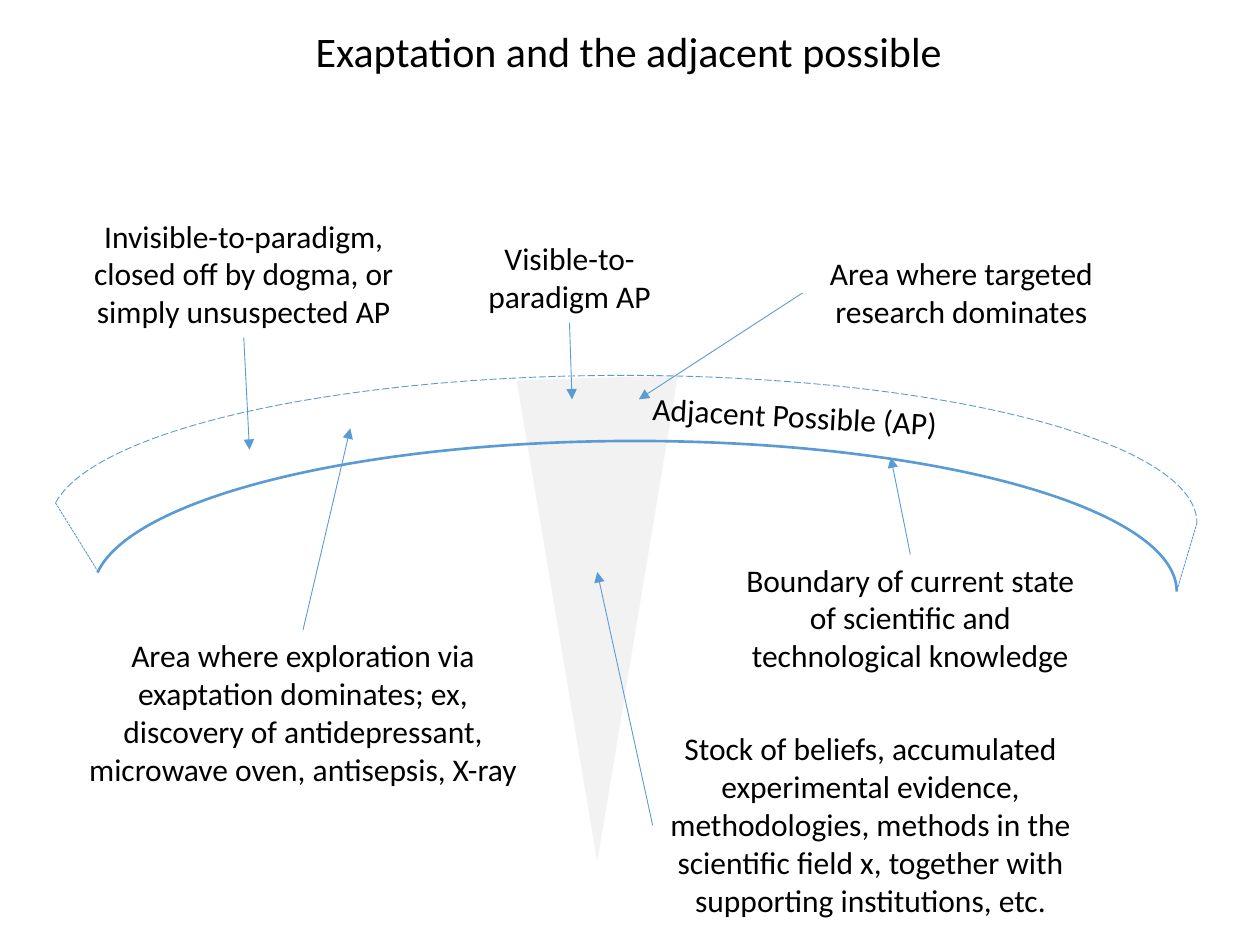
from lxml import etree
from pptx import Presentation
from pptx import util as u
from pptx.dml.color import RGBColor
from pptx.enum import dml, shapes, text
from pptx.oxml import ns

HEX = {"ink": "000000", "line": "5B9BD5", "wedge": "F2F2F2"}
DASH = dml.MSO_LINE_DASH_STYLE
TOP, LEFT, BOTTOM = 0, 1, 2


def color(name):
    return RGBColor.from_string(HEX[name])


def lengths(*nums):
    return [u.Inches(n) for n in nums]


def write(shape, words, size=18, align=text.PP_ALIGN.CENTER,
          anchor=text.MSO_ANCHOR.TOP, wrap=True):
    frame = shape.text_frame
    frame.word_wrap = wrap
    frame.vertical_anchor = anchor
    para = frame.paragraphs[0]
    para.alignment = align
    run = para.add_run()
    run.text = words
    run.font.size = u.Pt(size)
    run.font.name = "Calibri"
    run.font.color.rgb = color("ink")


def stroke(shape, width=0.5, dash=None):
    shape.line.color.rgb = color("line")
    shape.line.width = u.Pt(width)
    if dash:
        shape.line.dash_style = dash


def link(parent, start, end, dash=None, arrow=False):
    line = parent.add_connector(shapes.MSO_CONNECTOR.STRAIGHT,
                                *lengths(*start, *end))
    stroke(line, dash=dash)
    if arrow:
        tail = etree.SubElement(line.line._get_or_add_ln(), ns.qn("a:tailEnd"))
        tail.set("type", "triangle")
    etree.SubElement(line._element.spPr, ns.qn("a:effectLst"))
    return line


def head(slide, box):
    title = slide.shapes.title
    title.left, title.top, title.width, title.height = lengths(*box)
    write(title, "Exaptation and the adjacent possible", size=24,
          anchor=text.MSO_ANCHOR.MIDDLE)


def wedge(slide, box):
    x, y, w, h = box
    pen = slide.shapes.build_freeform(*lengths(x, y + 0.04))
    pen.add_line_segments([lengths(x + w / 2, y + h), lengths(x + w, y)])
    shape = pen.convert_to_shape()
    shape.shadow.inherit = False
    shape.fill.solid()
    shape.fill.fore_color.rgb = color("wedge")
    shape.line.fill.background()


def arc(parent, box, width, dash=None):
    shape = parent.add_shape(shapes.MSO_SHAPE.ARC, *lengths(*box))
    shape.adjustments[0] = 109.21
    shape.adjustments[1] = 0
    shape.shadow.inherit = False
    shape.fill.background()
    stroke(shape, width, dash)


def band(slide, box):
    x, y, w, h = box
    parts = slide.shapes.add_group_shape().shapes
    arc(parts, (x + 0.34, y + 0.52, w - 0.5, h + 0.05), 1.5)
    arc(parts, box, 0.5, DASH.LONG_DASH)
    link(parts, (x + 0.04, y + 1.01), (x + 0.38, y + 1.56), DASH.SQUARE_DOT)
    link(parts, (x + w, y + h / 2), (x + w - 0.16, y + 1.71), DASH.SQUARE_DOT)


def name(slide, box):
    label = slide.shapes.add_textbox(*lengths(*box))
    label.rotation = 3.1
    write(label, "Adjacent Possible (AP)", align=text.PP_ALIGN.LEFT, wrap=False)


def note(slide, box, words, side, end):
    label = slide.shapes.add_textbox(*lengths(*box))
    write(label, words)
    line = link(slide.shapes, box[:2], end, arrow=True)
    line.begin_connect(label, side)


NOTES = [
    ((5.18, 5.74, 3.46, 1.62),
     "Stock of beliefs, accumulated experimental evidence, methodologies, "
     "methods in the scientific field x, together with supporting "
     "institutions, etc.", LEFT, (4.74, 4.54)),
    ((3.45, 1.85, 2.14, 0.71), "Visible-to-paradigm AP", BOTTOM, (4.54, 3.17)),
    ((6.37, 1.97, 2.52, 0.71), "Area where targeted research dominates",
     LEFT, (5.07, 3.17)),
    ((0.59, 5, 3.63, 1.31),
     "Area where exploration via exaptation dominates; ex, discovery of "
     "antidepressant, microwave oven, antisepsis, X-ray", TOP, (2.78, 3.4)),
    ((5.74, 4.4, 2.97, 1.01),
     "Boundary of current state of scientific and technological knowledge",
     TOP, (7.07, 3.63)),
    ((0.62, 1.67, 2.63, 1.01),
     "Invisible-to-paradigm, closed off by dogma, or simply unsuspected AP",
     BOTTOM, (1.98, 3.57)),
]


def main():
    deck = Presentation()
    deck.slide_width, deck.slide_height = lengths(10, 7.5)
    slide = deck.slides.add_slide(deck.slide_layouts[5])
    head(slide, (0.49, 0.01, 9, 0.79))
    wedge(slide, (4.1, 2.98, 1.28, 3.86))
    band(slide, (0.4, 2.98, 9.1, 2.34))
    for item in NOTES:
        note(slide, *item)
    name(slide, (5.08, 3.1, 2.49, 0.4))
    deck.save("out.pptx")


if __name__ == "__main__":
    main()
